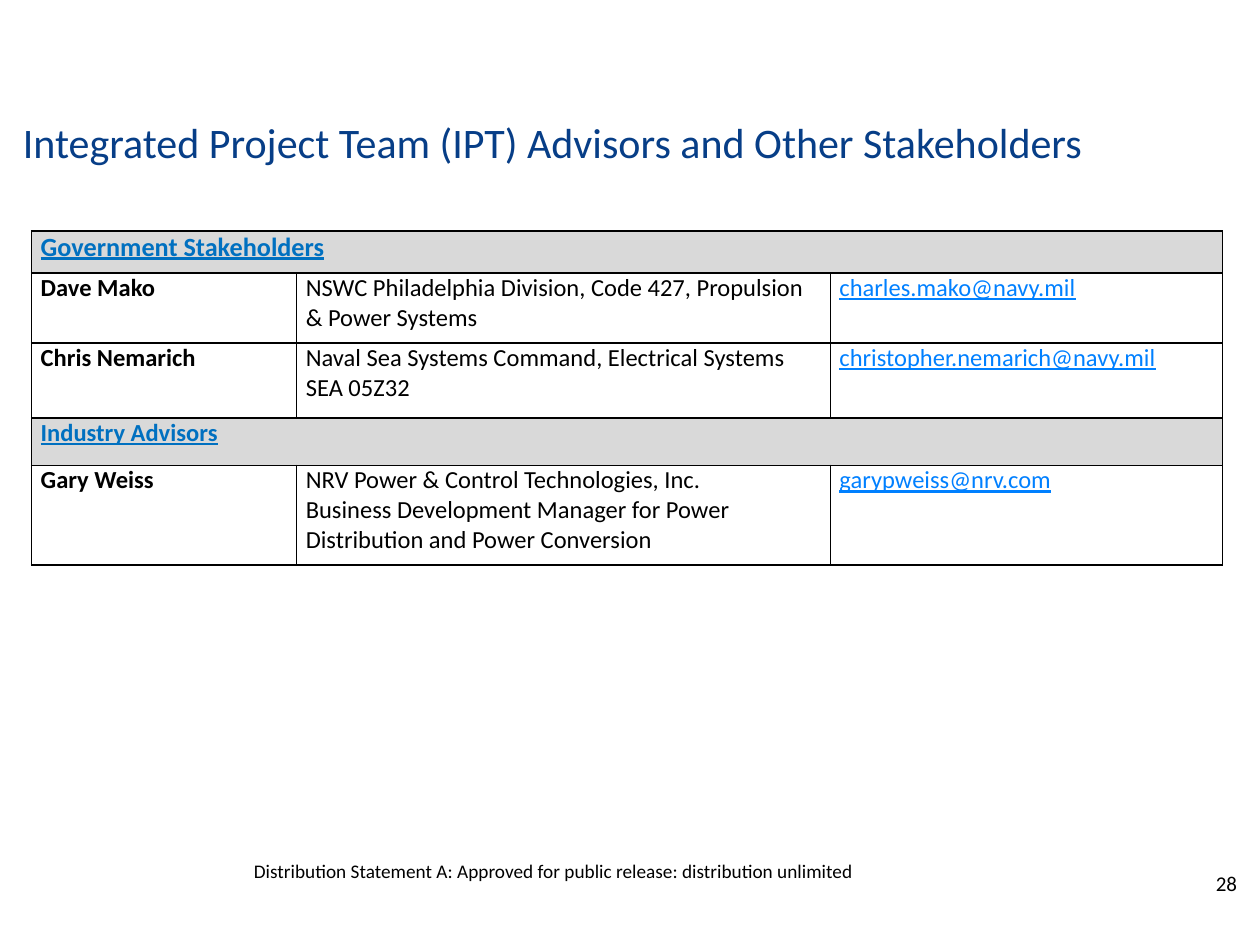
from dataclasses import dataclass

import pptx
import pptx.dml.color
import pptx.enum.text
import pptx.oxml
import pptx.oxml.ns
import pptx.util

Pt = pptx.util.Pt
Align = pptx.enum.text.PP_ALIGN
Anchor = pptx.enum.text.MSO_ANCHOR


@dataclass(frozen=True)
class Theme:
    font: str = "Calibri"
    title: str = "073E87"
    heading: str = "0070C0"
    link: str = "0080FF"
    ink: str = "000000"
    band: str = "D9D9D9"
    title_size: float = 24
    heading_size: float = 15
    body_size: float = 14
    number_size: float = 12
    footer_size: float = 11
    border: float = 1


THEME = Theme()


@dataclass(frozen=True)
class Style:
    size: float
    color: str
    bold: bool = False
    underline: bool = False


@dataclass(frozen=True)
class Label:
    text: str
    box: tuple[float, float, float, float]
    style: Style
    align: Align = Align.LEFT
    anchor: Anchor = Anchor.MIDDLE
    wrap: bool = True


@dataclass(frozen=True)
class Section:
    heading: str
    size: float
    height: float


@dataclass(frozen=True)
class Person:
    name: str
    role: tuple[str, ...]
    email: str
    height: float


NAME = Style(THEME.body_size, THEME.ink, bold=True)
BODY = Style(THEME.body_size, THEME.ink)
LINK = Style(THEME.body_size, THEME.link, underline=True)

LABELS = (
    Label("Integrated Project Team (IPT) Advisors and Other Stakeholders",
          (6, 60, 648, 42), Style(THEME.title_size, THEME.title)),
    Label("28", (660, 490, 54, 29), Style(THEME.number_size, THEME.ink), Align.RIGHT),
    Label("Distribution Statement A: Approved for public release: distribution unlimited",
          (138, 487.5, 360, 21), Style(THEME.footer_size, THEME.ink),
          anchor=Anchor.TOP, wrap=False),
)

TABLE_LEFT, TABLE_TOP = 18, 132
COLUMN_WIDTHS = (151.5, 305, 224)
ROWS = (
    Section("Government Stakeholders", THEME.heading_size, 24),
    Person("Dave Mako",
           ("NSWC Philadelphia Division, Code 427, Propulsion & Power Systems",),
           "charles.mako@navy.mil", 40),
    Person("Chris Nemarich",
           ("Naval Sea Systems Command, Electrical Systems SEA 05Z32",),
           "christopher.nemarich@navy.mil", 43),
    Section("Industry Advisors", THEME.body_size, 27),
    Person("Gary Weiss",
           ("NRV Power & Control Technologies, Inc.",
            "Business Development Manager for Power Distribution and Power Conversion"),
           "garypweiss@nrv.com", 57),
)


def rgb(color: str) -> pptx.dml.color.RGBColor:
    return pptx.dml.color.RGBColor.from_string(color)


def add_run(paragraph, text: str, style: Style) -> None:
    run = paragraph.add_run()
    run.text = text
    run.font.name = THEME.font
    run.font.size = Pt(style.size)
    run.font.bold = style.bold
    run.font.underline = style.underline
    run.font.color.rgb = rgb(style.color)


def add_label(slide, label: Label) -> None:
    shape = slide.shapes.add_textbox(*(Pt(length) for length in label.box))
    frame = shape.text_frame
    frame.word_wrap = label.wrap
    frame.vertical_anchor = label.anchor
    if not label.wrap:
        frame.auto_size = pptx.enum.text.MSO_AUTO_SIZE.SHAPE_TO_FIT_TEXT
    paragraph = frame.paragraphs[0]
    paragraph.alignment = label.align
    add_run(paragraph, label.text, label.style)


def format_cell(cell, fill: str | None = None) -> None:
    cell.margin_left = cell.margin_right = Pt(5.25)
    cell.margin_top = cell.margin_bottom = Pt(0)
    properties = cell._tc.get_or_add_tcPr()
    for side in ("lnL", "lnR", "lnT", "lnB"):
        properties.append(pptx.oxml.parse_xml(
            f'<a:{side} {pptx.oxml.ns.nsdecls("a")} w="{Pt(THEME.border)}">'
            f'<a:solidFill><a:srgbClr val="{THEME.ink}"/></a:solidFill></a:{side}>'))
    if fill:
        cell.fill.solid()
        cell.fill.fore_color.rgb = rgb(fill)
    else:
        cell.fill.background()


def write_cell(cell, lines: tuple[str, ...], style: Style, space_after: float = 0) -> None:
    frame = cell.text_frame
    for index, line in enumerate(lines):
        paragraph = frame.add_paragraph() if index else frame.paragraphs[0]
        paragraph.space_after = Pt(space_after)
        add_run(paragraph, line, style)


def add_contacts(slide) -> None:
    table = slide.shapes.add_table(
        len(ROWS), len(COLUMN_WIDTHS), Pt(TABLE_LEFT), Pt(TABLE_TOP),
        Pt(sum(COLUMN_WIDTHS)), Pt(sum(row.height for row in ROWS))).table
    table.first_row = table.horz_banding = False
    for column, width in zip(table.columns, COLUMN_WIDTHS):
        column.width = Pt(width)

    for index, row in enumerate(ROWS):
        table.rows[index].height = Pt(row.height)
        cells = list(table.rows[index].cells)
        is_section = isinstance(row, Section)
        for cell in cells:
            format_cell(cell, THEME.band if is_section else None)
        if is_section:
            cells[0].merge(cells[-1])
            heading = Style(row.size, THEME.heading, bold=True, underline=True)
            write_cell(cells[0], (row.heading,), heading, space_after=6)
        else:
            write_cell(cells[0], (row.name,), NAME)
            write_cell(cells[1], row.role, BODY)
            write_cell(cells[2], (row.email,), LINK)


def main() -> None:
    presentation = pptx.Presentation()
    presentation.slide_width, presentation.slide_height = Pt(720), Pt(540)
    slide = presentation.slides.add_slide(presentation.slide_layouts[6])

    # Stakeholder table
    add_contacts(slide)

    # Title, page number and distribution statement
    for label in LABELS:
        add_label(slide, label)

    presentation.save("out.pptx")


if __name__ == "__main__":
    main()
